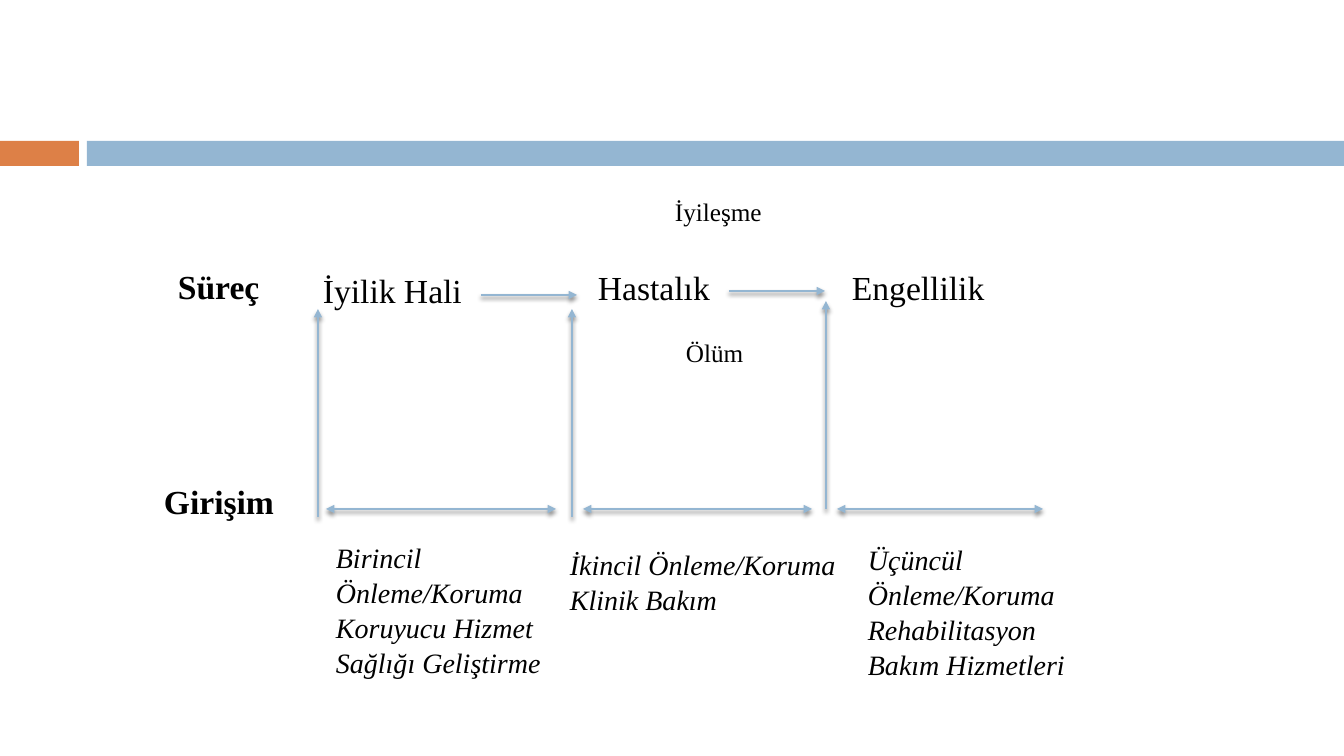
"""Build a slide that maps stages of illness to levels of prevention."""
from lxml import etree
from pptx import Presentation
from pptx.dml.color import RGBColor
from pptx.enum.shapes import MSO_CONNECTOR, MSO_SHAPE
from pptx.oxml import parse_xml
from pptx.oxml.ns import nsdecls, qn
from pptx.util import Emu, Pt

RECT = MSO_SHAPE.RECTANGLE
LINE = MSO_CONNECTOR.STRAIGHT
PX = 914400 / 100.8
WIDE, HIGH = 1344, 756

THEME = {
    "font": "Times New Roman", "ink": "000000", "blue": "94B6D2",
    "orange": "DD8047", "line": 1.5, "pitch": 1.04,
    "head": {"size": 24, "bold": True},
    "stage": {"size": 24},
    "care": {"size": 20, "italic": True},
    "end": {"size": 18},
}

BAR_TOP, BAR_HIGH = 141, 25
BARS = [(0, 79, "orange"), (87, WIDE - 87, "blue")]

LABELS = [
    ("head", 168, 259, 109, 62, ["Süreç"]),
    ("head", 154, 474, 144, 62, ["Girişim"]),
    ("stage", 313, 263, 163, 62, ["İyilik Hali"]),
    ("stage", 588, 260, 293, 62, ["Hastalık"]),
    ("stage", 842, 260, 293, 62, ["Engellilik"]),
    ("care", 326, 534, 290, 178,
     ["Birincil Önleme/Koruma", "Koruyucu Hizmet", "Sağlığı Geliştirme"]),
    ("care", 560, 541, 293, 95, ["İkincil Önleme/Koruma", "Klinik Bakım"]),
    ("care", 858, 536, 293, 178,
     ["Üçüncül Önleme/Koruma", "Rehabilitasyon", "Bakım Hizmetleri"]),
    ("end", 665, 190, 139, 49, ["İyileşme"]),
    ("end", 676, 331, 100, 49, ["Ölüm"]),
]

STEPS = [(481, 295), (729, 291)]
STEP_LEN = 96
RISE_LEFT, RISE_GAP, RISE_LEN = 318, 254, 208
RISE_FEET = [517, 517, 509]
SPAN_Y = 509
SPANS = [(326, 556), (583, 812), (837, 1043)]

SHADOW = (
    f'<a:effectLst {nsdecls("a")}><a:outerShdw blurRad="38100" dist="30480" '
    'dir="5400000" rotWithShape="0"><a:srgbClr val="000000">'
    '<a:alpha val="45000"/></a:srgbClr></a:outerShdw></a:effectLst>'
)


def px(*nums):
    return [Emu(round(n * PX)) for n in nums]


def tint(name):
    return RGBColor.from_string(THEME[name])


def add_bar(slide, left, width, name):
    bar = slide.shapes.add_shape(RECT, *px(left, BAR_TOP, width, BAR_HIGH))
    bar.shadow.inherit = False
    bar.fill.solid()
    bar.fill.fore_color.rgb = tint(name)
    bar.line.fill.background()


def add_label(slide, role, left, top, width, height, lines):
    box = slide.shapes.add_textbox(*px(left, top, width, height))
    frame = box.text_frame
    frame.word_wrap = True
    frame.text = "\n".join(lines)
    style = THEME[role]
    for para in frame.paragraphs:
        para.line_spacing = THEME["pitch"]
        for run in para.runs:
            font = run.font
            font.name = THEME["font"]
            font.size = Pt(style["size"])
            font.bold = style.get("bold", False)
            font.italic = style.get("italic", False)
            font.color.rgb = tint("ink")


def add_arrow(slide, start, end, both=False):
    arrow = slide.shapes.add_connector(LINE, *px(*start, *end))
    arrow.line.color.rgb = tint("blue")
    arrow.line.width = Pt(THEME["line"])
    props = arrow.element.spPr
    stroke = props.find(qn("a:ln"))
    for tag in ("a:headEnd", "a:tailEnd") if both else ("a:tailEnd",):
        etree.SubElement(stroke, qn(tag), type="triangle")
    props.append(parse_xml(SHADOW))


def main():
    deck = Presentation()
    deck.slide_width, deck.slide_height = px(WIDE, HIGH)
    slide = deck.slides.add_slide(deck.slide_layouts[6])
    for bar in BARS:
        add_bar(slide, *bar)
    for label in LABELS:
        add_label(slide, *label)
    for x, y in STEPS:
        add_arrow(slide, (x, y), (x + STEP_LEN, y))
    for col, foot in enumerate(RISE_FEET):
        x = RISE_LEFT + col * RISE_GAP
        add_arrow(slide, (x, foot), (x, foot - RISE_LEN))
    for left, right in SPANS:
        add_arrow(slide, (left, SPAN_Y), (right, SPAN_Y), both=True)
    deck.save("out.pptx")


if __name__ == "__main__":
    main()
